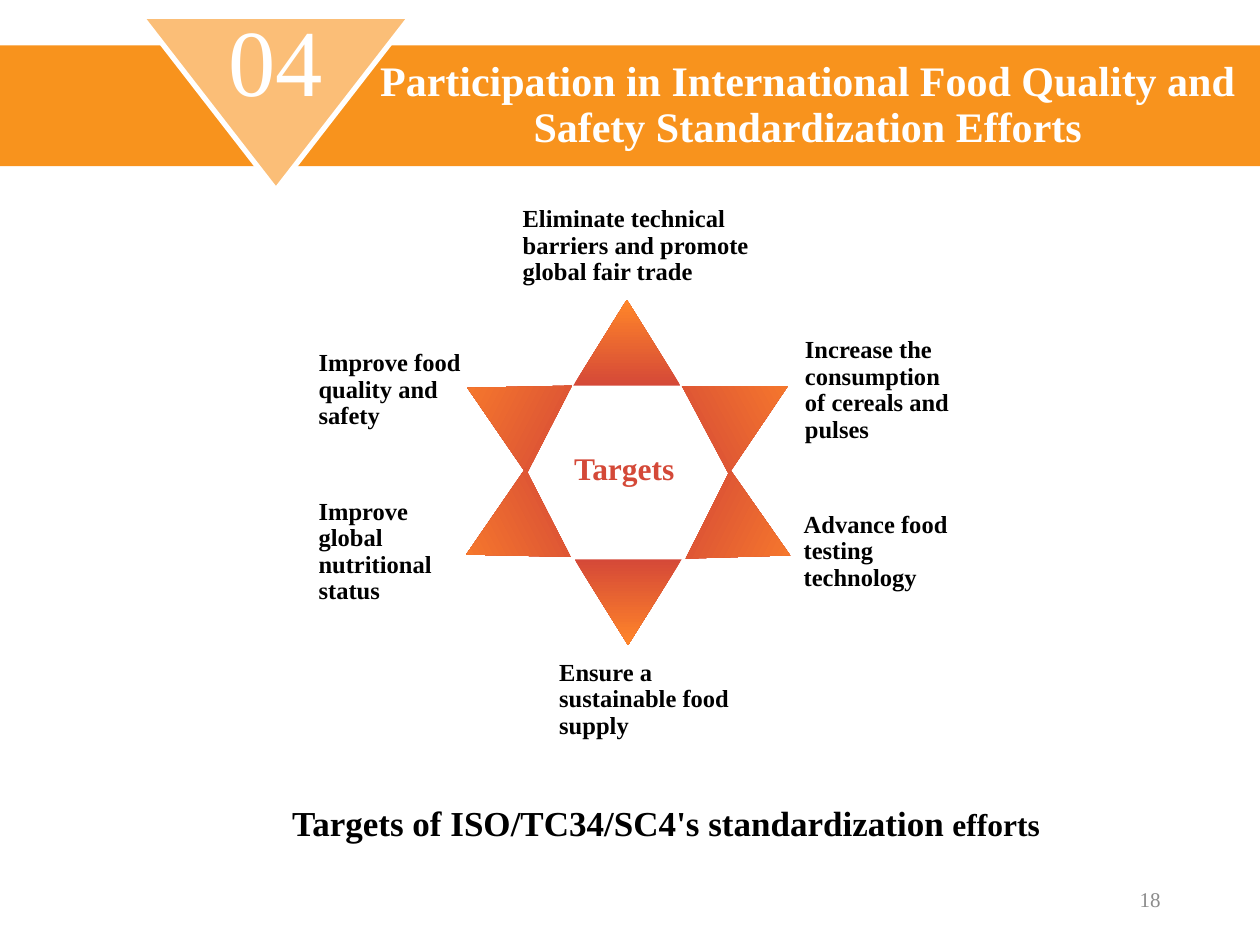
from pptx import Presentation
from pptx.dml.color import RGBColor
from pptx.enum.shapes import MSO_SHAPE as Shape
from pptx.enum.text import MSO_ANCHOR as Anchor, PP_ALIGN as Align
from pptx.oxml.ns import qn
from pptx.util import Inches, Pt

COLORS = {
    "band": "F8931D", "badge": "FBBE77", "white": "FFFFFF", "black": "000000",
    "core": "D54938", "tip": "FF8529", "targets": "D44938", "number": "8C8C8C",
}
FONT = "Times New Roman"
COLUMNS, ROWS = 100, 75


def color(name):
    return RGBColor.from_string(COLORS[name])


def write(shape, text, size=14, bold=True, ink="black", align=Align.LEFT,
          anchor=Anchor.MIDDLE, insets=(0.1, 0.05, 0.1, 0.05), wrap=True):
    """Fill a shape with one paragraph; text is a string or (text, size, bold) runs."""
    frame = shape.text_frame
    frame.word_wrap = wrap
    frame.vertical_anchor = anchor
    (frame.margin_left, frame.margin_top,
     frame.margin_right, frame.margin_bottom) = map(Inches, insets)
    paragraph = frame.paragraphs[0]
    paragraph.alignment = align
    paragraph.line_spacing = 0.9
    runs = [(text, size, bold)] if isinstance(text, str) else text
    for words, run_size, run_bold in runs:
        run = paragraph.add_run()
        run.text = words
        run.font.name = FONT
        run.font.size = Pt(run_size)
        run.font.bold = run_bold
        run.font.color.rgb = color(ink)


class SlideBuilder:
    """Places elements on a grid of COLUMNS by ROWS square cells."""

    def __init__(self, presentation):
        self.slide = presentation.slides.add_slide(presentation.slide_layouts[6])
        self.column = presentation.slide_width / COLUMNS
        self.row = presentation.slide_height / ROWS

    def place(self, left, top, width, height):
        return (round(left * self.column), round(top * self.row),
                round(width * self.column), round(height * self.row))

    def label(self, box, text, **style):
        write(self.slide.shapes.add_textbox(*self.place(*box)), text, **style)

    def band(self, box, text, **style):
        shape = self.slide.shapes.add_shape(Shape.RECTANGLE, *self.place(*box))
        shape.shadow.inherit = False
        shape.fill.solid()
        shape.fill.fore_color.rgb = color("band")
        shape.line.fill.background()
        write(shape, text, **style)

    def badge(self, points, text, **style):
        start, *rest = [(x * self.column, y * self.row) for x, y in points]
        builder = self.slide.shapes.build_freeform(*start)
        builder.add_line_segments(rest, close=True)
        shape = builder.convert_to_shape()
        shape.shadow.inherit = False
        shape.fill.solid()
        shape.fill.fore_color.rgb = color("badge")
        shape.line.color.rgb = color("white")
        shape.line.width = Pt(3)
        write(shape, text, **style)

    def star_point(self, box, rotation=0, flipped=False):
        shape = self.slide.shapes.add_shape(Shape.ISOSCELES_TRIANGLE, *self.place(*box))
        shape.shadow.inherit = False
        shape.line.fill.background()
        shape.fill.gradient()
        shape.fill.gradient_angle = 90
        for stop, position, name in zip(shape.fill.gradient_stops, (0, 0.99), ("core", "tip")):
            stop.position = position
            stop.color.rgb = color(name)
        shape.rotation = rotation
        if flipped:
            shape._element.spPr.find(qn("a:xfrm")).set("flipV", "1")


def main():
    presentation = Presentation()
    presentation.slide_width, presentation.slide_height = Inches(10), Inches(7.5)
    builder = SlideBuilder(presentation)

    # Caption
    builder.label((22.2, 63.5, 61.5, 4), [
        ("Targets of ISO/TC34/SC4's standardization", 20, True),
        (" ", 18, False), ("efforts", 18, True)], anchor=Anchor.TOP, wrap=False)

    # Six points of the star
    for box, rotation, flipped in [
        ((45.5, 23.8, 8.5, 6.8), 0, False),
        ((45.6, 44.4, 8.5, 6.8), 0, True),
        ((55.5, 38.8, 7.9, 7.3), 296.6, True),
        ((55.3, 28.7, 7.9, 7.4), 242, True),
        ((36.4, 28.8, 7.9, 7.3), 297.2, False),
        ((36.3, 38.7, 7.9, 7.3), 242.9, False),
    ]:
        builder.star_point(box, rotation, flipped)

    # Targets around the star
    for left, top, width, anchor, text in [
        (24.3, 28.2, 13.8, Anchor.MIDDLE, "Improve food quality and safety"),
        (24.3, 41, 13.8, Anchor.MIDDLE, "Improve global nutritional status"),
        (43.4, 51.9, 18.4, Anchor.TOP, "Ensure a sustainable food supply"),
        (62.8, 41, 13.8, Anchor.MIDDLE, "Advance food testing technology"),
        (62.9, 28.2, 13.8, Anchor.MIDDLE, "Increase the consumption of cereals and pulses"),
        (40.5, 17.6, 20.6, Anchor.BOTTOM,
         "Eliminate technical barriers and promote global fair trade"),
    ]:
        builder.label((left, top, width, 5.6), text, anchor=anchor)
    builder.label((43.1, 35.9, 12.9, 2.9), "Targets", size=18, ink="targets",
                  align=Align.CENTER, insets=(0, 0, 0, 0))

    # Title band and section badge
    builder.band((0, 3.6, 100, 9.6),
                 "Participation in International Food Quality and Safety Standardization Efforts",
                 size=24, ink="white", align=Align.CENTER, insets=(2.92, 0.05, 0.1, 0.05))
    builder.badge([(11.2, 1.3), (32.6, 1.3), (21.9, 15.1)], "04", size=54, bold=False,
                  ink="white", align=Align.CENTER, insets=(0.1, 0, 0.1, 0.59))

    # Slide number
    builder.label((70.6, 69.5, 22.5, 4), "18", size=12, bold=False, ink="number",
                  align=Align.RIGHT)

    presentation.save("out.pptx")


if __name__ == "__main__":
    main()
